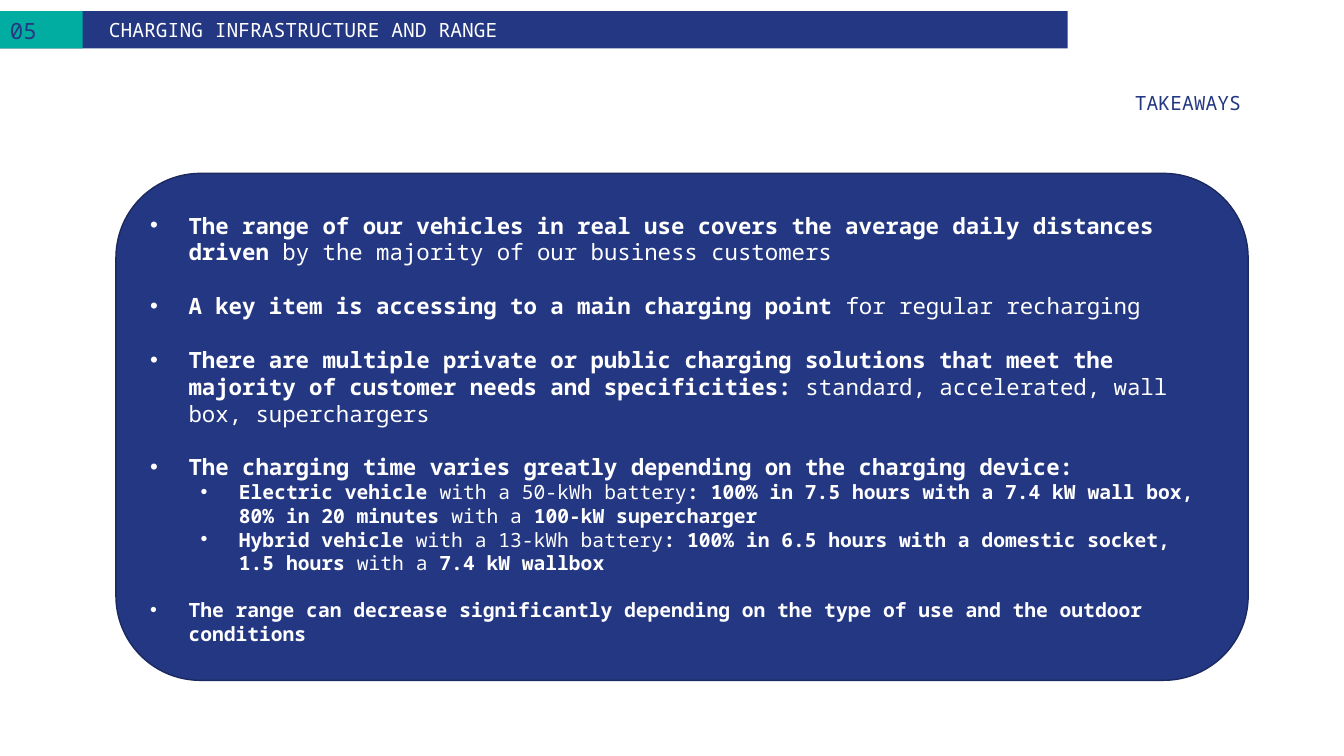
from lxml import etree
from pptx import Presentation
from pptx.dml.color import RGBColor
from pptx.enum import shapes, text
from pptx.oxml import ns
from pptx.util import Inches, Pt

NAVY = RGBColor(0x24, 0x37, 0x82)
DARK_NAVY = RGBColor(0x1B, 0x29, 0x60)
TEAL = RGBColor(0x00, 0xAD, 0xA0)
WHITE = RGBColor(0xFF, 0xFF, 0xFF)
FONT = "Noto Sans Mono"

# Each takeaway: level, size, space before, then parts alternating bold and regular
TAKEAWAYS = [
    (0, 16, 0, ["The range of our vehicles in real use covers the average daily distances driven ",
                "by the majority of our business customers"]),
    (0, 16, 19.2, ["A key item is accessing to a main charging point ",
                   "for regular recharging"]),
    (0, 16, 19.2, ["There are multiple private or public charging solutions that meet the "
                   "majority of customer needs and specificities: ",
                   "standard, accelerated, wall box, superchargers"]),
    (0, 16, 19.2, ["The charging time varies greatly depending on the charging device:"]),
    (1, 14, 0, ["Electric vehicle ", "with a 50-kWh battery",
                ": 100% in 7.5 hours with a 7.4 kW wall box, 80% in 20 minutes ",
                "with a", " 100-kW supercharger"]),
    (1, 14, 0, ["Hybrid vehicle ", "with a 13-kWh battery",
                ": 100% in 6.5 hours with a domestic socket, 1.5 hours ",
                "with a", " 7.4 kW wallbox"]),
    (0, 14, 16.9, ["The range can decrease significantly depending on the type of use "
                   "and the outdoor conditions"]),
]


def write(paragraph, parts, size=14, color=WHITE, bold=False,
          align=text.PP_ALIGN.LEFT, spacing=1.0, before=0):
    """Fill a paragraph with parts; with bold on, every other part is bold."""
    paragraph.alignment = align
    paragraph.line_spacing = spacing
    paragraph.space_before = Pt(before)
    for index, part in enumerate(parts):
        run = paragraph.add_run()
        run.text = part
        run.font.name = FONT
        run.font.size = Pt(size)
        run.font.bold = bold and index % 2 == 0
        run.font.color.rgb = color


def add_bullet(paragraph, indent):
    properties = paragraph._p.get_or_add_pPr()
    properties.set("marL", str(Inches(indent)))
    properties.set("indent", str(-Inches(0.38)))
    etree.SubElement(properties, ns.qn("a:buFont")).set("typeface", "Arial")
    etree.SubElement(properties, ns.qn("a:buChar")).set("char", "•")


class TakeawaySlide:
    def __init__(self, presentation):
        self.slide = presentation.slides.add_slide(presentation.slide_layouts[1])

    def place(self, shape, box, anchor, insets):
        shape.left, shape.top, shape.width, shape.height = map(Inches, box)
        frame = shape.text_frame
        frame.auto_size = text.MSO_AUTO_SIZE.NONE
        frame.word_wrap = True
        frame.vertical_anchor = anchor
        (frame.margin_left, frame.margin_top,
         frame.margin_right, frame.margin_bottom) = map(Inches, insets)
        return frame

    def panel(self, box, fill, line=None, kind=shapes.MSO_SHAPE.RECTANGLE):
        panel = self.slide.shapes.add_shape(kind, *map(Inches, box))
        panel.shadow.inherit = False
        panel.fill.solid()
        panel.fill.fore_color.rgb = fill
        if line is None:
            panel.line.fill.background()
        else:
            panel.line.color.rgb = line
            panel.line.width = Pt(1)
        return panel

    def band(self, label, box, fill, anchor, insets, **style):
        frame = self.place(self.panel(box, fill), box, anchor, insets)
        write(frame.paragraphs[0], [label], **style)

    def title(self, label, box):
        frame = self.place(self.slide.shapes.title, box, text.MSO_ANCHOR.TOP,
                           (0.1, 0.05, 0.1, 0.05))
        write(frame.paragraphs[0], [label], color=NAVY,
              align=text.PP_ALIGN.RIGHT, spacing=0.95)

    def bullets(self, items, box):
        body = self.slide.placeholders[1]
        frame = self.place(body, box, text.MSO_ANCHOR.TOP, (0, 0, 0, 0))
        for index, (level, size, before, parts) in enumerate(items):
            paragraph = frame.add_paragraph() if index else frame.paragraphs[0]
            paragraph.level = level
            add_bullet(paragraph, 0.38 + 0.5 * level)
            write(paragraph, parts, size=size, bold=True, before=before)
        # Bring the list in front of its card
        self.slide.shapes._spTree.append(body._element)


def main():
    presentation = Presentation()
    presentation.slide_width = Inches(13.33)
    presentation.slide_height = Inches(7.5)

    page = TakeawaySlide(presentation)
    page.band("CHARGING INFRASTRUCTURE AND RANGE", (0, 0.11, 10.59, 0.37), NAVY,
              text.MSO_ANCHOR.MIDDLE, (1.08, 0, 0.39, 0))
    page.band("05", (0, 0.11, 0.82, 0.37), TEAL, text.MSO_ANCHOR.TOP,
              (0.1, 0.05, 0.1, 0.05), size=16, color=NAVY, spacing=1.05)
    page.title("TAKEAWAYS", (0.6, 0.87, 11.81, 0.37))
    page.panel((1.15, 1.72, 11.23, 5.03), NAVY, DARK_NAVY,
               shapes.MSO_SHAPE.ROUNDED_RECTANGLE)
    page.bullets(TAKEAWAYS, (1.49, 2.1, 10.55, 4.3))
    presentation.save("out.pptx")


if __name__ == "__main__":
    main()
